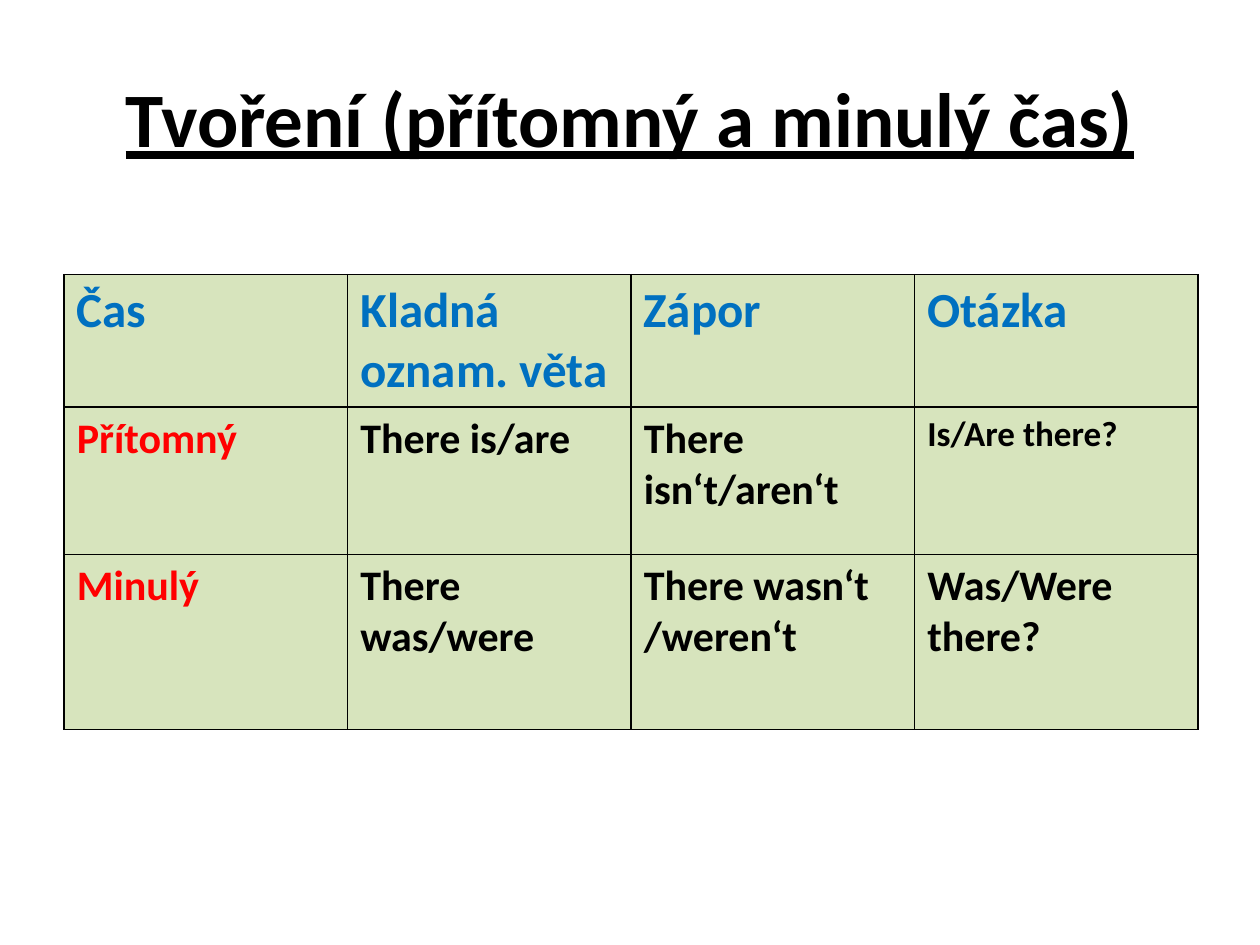
from dataclasses import dataclass

from lxml import etree
from pptx import Presentation
from pptx import util as u
from pptx.dml.color import RGBColor
from pptx.enum import text
from pptx.oxml.ns import qn


@dataclass(frozen=True)
class Theme:
    font: str = "Calibri"
    ink: str = "000000"
    head: str = "0070C0"
    tense: str = "FF0000"
    cell: str = "D7E4BD"
    title_size: int = 44
    head_size: int = 28
    body_size: int = 24
    small_size: int = 20
    border: int = 1


class Deck:
    """Holds the theme and the current slide."""

    def __init__(self, theme):
        self.theme = theme
        self.prs = Presentation()
        self.prs.slide_width = u.Inches(10)
        self.prs.slide_height = u.Inches(7.5)
        self.slide = self.prs.slides.add_slide(self.prs.slide_layouts[5])

    def style(self, frame, size, color, line=False):
        for para in frame.paragraphs:
            for run in para.runs:
                font = run.font
                font.name = self.theme.font
                font.size = u.Pt(size)
                font.bold = True
                font.underline = line
                font.color.rgb = RGBColor.from_string(color)

    def title(self, words, left, top, width, height):
        box = self.slide.shapes.title
        box.left, box.top = u.Inches(left), u.Inches(top)
        box.width, box.height = u.Inches(width), u.Inches(height)
        frame = box.text_frame
        frame.text = words
        frame.word_wrap = True
        frame.vertical_anchor = text.MSO_ANCHOR.MIDDLE
        frame.paragraphs[0].alignment = text.PP_ALIGN.CENTER
        self.style(frame, self.theme.title_size, self.theme.ink, line=True)

    def edge(self, cell):
        # Borders come before the fill in the cell properties
        props = cell._tc.get_or_add_tcPr()
        for spot, side in enumerate(("a:lnL", "a:lnR", "a:lnT", "a:lnB")):
            line = etree.Element(qn(side), w=str(u.Pt(self.theme.border)))
            fill = etree.SubElement(line, qn("a:solidFill"))
            etree.SubElement(fill, qn("a:srgbClr"), val=self.theme.ink)
            props.insert(spot, line)

    def look(self, row, col):
        """Size and colour of the text in a cell."""
        t = self.theme
        if row == 0:
            return t.head_size, t.head
        if col == 0:
            return t.body_size, t.tense
        if (row, col) == (1, 3):
            return t.small_size, t.ink
        return t.body_size, t.ink

    def table(self, rows, left, top, width, heights):
        frame = self.slide.shapes.add_table(
            len(rows), len(rows[0]), u.Inches(left), u.Inches(top),
            u.Inches(width), u.Inches(sum(heights)))
        grid = frame.table
        grid.horz_banding = False
        for r, (row, height) in enumerate(zip(rows, heights)):
            grid.rows[r].height = u.Inches(height)
            for c, words in enumerate(row):
                cell = grid.cell(r, c)
                cell.text_frame.text = words
                cell.fill.solid()
                cell.fill.fore_color.rgb = RGBColor.from_string(self.theme.cell)
                self.style(cell.text_frame, *self.look(r, c))
                self.edge(cell)


def main():
    deck = Deck(Theme())

    # Heading
    deck.title("Tvoření (přítomný a minulý čas)", 0.5, 0.3, 9, 1.25)

    # Tenses by sentence type
    tenses = [
        ["Čas", "Kladná oznam. věta", "Zápor", "Otázka"],
        ["Přítomný", "There is/are", "There isn‘t/aren‘t", "Is/Are there?"],
        ["Minulý", "There was/were", "There wasn‘t\n/weren‘t",
         "Was/Were there?"],
    ]
    deck.table(tenses, 0.51, 2.18, 9, [1.03, 1.17, 1.39])

    deck.prs.save("out.pptx")


if __name__ == "__main__":
    main()
